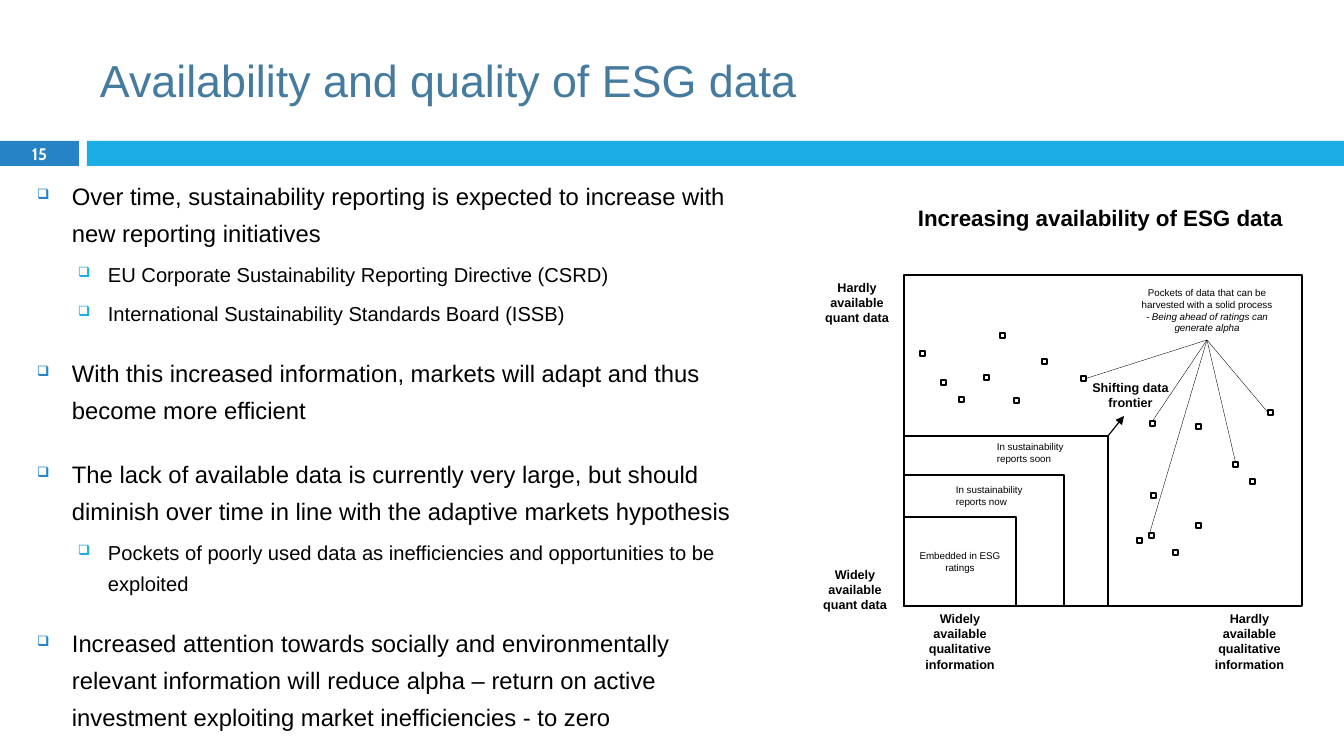
from lxml import etree
from pptx import Presentation, util as u
from pptx.dml.color import RGBColor
from pptx.enum import shapes, text
from pptx.oxml.ns import qn

PX = 914400 / 100.8
BLACK, BLUE, SKY = "000000", "2683C6", "1CADE4"
LEFT, CENTER = text.PP_ALIGN.LEFT, text.PP_ALIGN.CENTER
TOP, MIDDLE = text.MSO_ANCHOR.TOP, text.MSO_ANCHOR.MIDDLE

prs = Presentation()
prs.slide_width, prs.slide_height = round(1344 * PX), round(756 * PX)
slide = prs.slides.add_slide(prs.slide_layouts[6])


def write(holder, *lines, size, font="Arial", color=BLACK, bold=False,
          align=CENTER, anchor=TOP):
    """Fill a shape or, given a box of pixels, a new text box."""
    if isinstance(holder, tuple):
        holder = slide.shapes.add_textbox(*[round(v * PX) for v in holder])
    frame = holder.text_frame
    frame.word_wrap = True
    frame.vertical_anchor = anchor
    for i, line in enumerate(lines):
        par = frame.paragraphs[0] if i == 0 else frame.add_paragraph()
        par.alignment = align
        run = par.add_run()
        run.text = line
        run.font.size, run.font.name, run.font.bold = u.Pt(size), font, bold
        run.font.color.rgb = RGBColor.from_string(color)
    return holder


def rect(x, y, w, h, fill=None, line=None):
    box = slide.shapes.add_shape(shapes.MSO_SHAPE.RECTANGLE,
                                 *[round(v * PX) for v in (x, y, w, h)])
    box.shadow.inherit = False
    if fill:
        box.fill.solid()
        box.fill.fore_color.rgb = RGBColor.from_string(fill)
    else:
        box.fill.background()
    if line:
        box.line.color.rgb = RGBColor.from_string(BLACK)
        box.line.width = u.Pt(line)
    else:
        box.line.fill.background()
    return box


# Title and page band
rect(0, 141, 79, 25, fill=BLUE)
rect(87, 141, 1257, 25, fill=SKY)
write((90, 25, 1199, 109), "Availability and quality of ESG data",
      size=32, color="457B9E", align=LEFT, anchor=MIDDLE)
write((0, 140, 79, 27), "15", size=11.9, font="Cabin", color="FFFFFF",
      bold=True, anchor=MIDDLE)

# Argument: level, space before in points, wording
points = [
    (0, 7, "Over time, sustainability reporting is expected to increase with new reporting initiatives"),
    (1, 5.5, "EU Corporate Sustainability Reporting Directive (CSRD)"),
    (1, 5.5, "International Sustainability Standards Board (ISSB)"),
    (0, 17.5, "With this increased information, markets will adapt and thus become more efficient"),
    (0, 19, "The lack of available data is currently very large, but should diminish over time "
            "in line with the adaptive markets hypothesis"),
    (1, 5.5, "Pockets of poorly used data as inefficiencies and opportunities to be exploited"),
    (0, 17.5, "Increased attention towards socially and environmentally relevant information will "
              "reduce alpha – return on active investment exploiting market inefficiencies - to zero"),
]
levels = [(17, 35, 35, BLUE, 60), (14.4, 71, 30, SKY, 70)]
argument = write((27, 168, 720, 569), *[point[2] for point in points], size=17, align=LEFT)
for par, (level, before, _) in zip(argument.text_frame.paragraphs, points):
    size, margin, hanging, bullet_color, bullet_size = levels[level]
    par.level = level
    par.line_spacing = 1.3
    par.space_before = u.Pt(before)
    par.runs[0].font.size = u.Pt(size)
    props = par._p.get_or_add_pPr()
    props.set("marL", str(round(margin * PX)))
    props.set("indent", str(round(-hanging * PX)))
    color = etree.SubElement(props, qn("a:buClr"))
    etree.SubElement(color, qn("a:srgbClr"), val=bullet_color)
    etree.SubElement(props, qn("a:buSzPct"), val=str(bullet_size * 1000))
    etree.SubElement(props, qn("a:buChar"), char="❑")

# Nested data areas share the lower left corner
ORIGIN_X, ORIGIN_Y = 904, 606
for width, height in [(398, 331), (204, 170), (160, 131), (112, 89)]:
    area = rect(ORIGIN_X, ORIGIN_Y - height, width, height, line=1.5)
write(area, "Embedded in ESG ratings", size=7, anchor=MIDDLE)
write((946, 479, 96, 34), "In sustainability reports now", size=7, align=LEFT)
write((987, 436, 91, 34), "In sustainability reports soon", size=7, align=LEFT)

# Heading, axis ends and frontier label
write((908, 199, 387, 37), "Increasing availability of ESG data", size=16, bold=True, align=LEFT)
for place, label in [
    ((903, 606, 114, 72), "Widely available qualitative information"),
    ((1197, 606, 105, 72), "Hardly available qualitative information"),
    ((807, 562, 96, 56), "Widely available quant data"),
    ((809, 275, 96, 56), "Hardly available quant data"),
    ((1077, 375, 107, 40), "Shifting data frontier"),
]:
    write(place, label, size=9, bold=True)

pockets = write((1129, 282, 156, 58), "Pockets of data that can be harvested with a solid process",
                "- Being ahead of ratings can generate alpha", size=7)
pockets.text_frame.paragraphs[1].runs[0].font.italic = True

# Data points: left, top, and the side joined to the pockets note
data_points = [
    (920, 351, None), (941, 380, None), (1042, 359, None), (984, 375, None),
    (1000, 333, None), (959, 397, None), (1014, 398, None), (1196, 424, None),
    (1151, 493, None), (1196, 523, None), (1137, 538, None), (1173, 550, None),
    (1250, 479, None), (1081, 376, 3), (1150, 421, 0), (1149, 533, 1),
    (1233, 462, 0), (1268, 410, 1),
]
links = []
for x, y, side in data_points:
    data_point = rect(x, y, 5, 5, line=1)
    if side is not None:
        link = slide.shapes.add_connector(shapes.MSO_CONNECTOR.STRAIGHT, 0, 0, 0, 0)
        link.begin_connect(data_point, side)
        link.end_connect(pockets, 2)
        links.append((link, 0.25))

# Frontier arrow
frontier = slide.shapes.add_connector(
    shapes.MSO_CONNECTOR.STRAIGHT, *[round(v * PX) for v in (1108, 436, 1124, 416)])
links.append((frontier, 0.79))
for link, weight in links:
    link.line.color.rgb = RGBColor.from_string(BLACK)
    link.line.width = u.Pt(weight)
    etree.SubElement(link._element.spPr, qn("a:effectLst"))
etree.SubElement(frontier.line._get_or_add_ln(), qn("a:tailEnd"), type="triangle")

prs.save("out.pptx")
